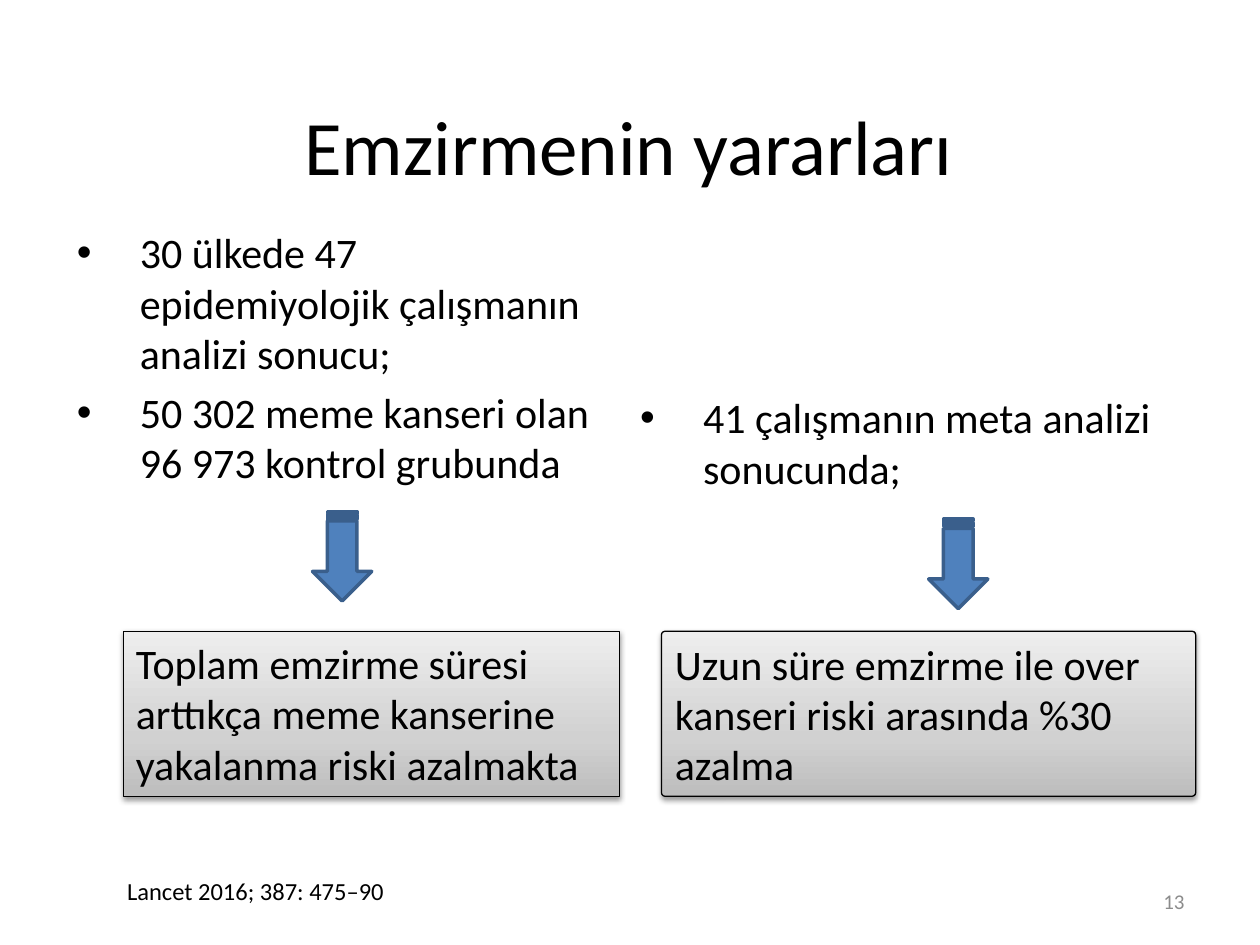
"""Build the slide on the benefits of breastfeeding."""
from copy import deepcopy
from dataclasses import dataclass

from lxml import etree
from pptx import Presentation
from pptx import util as u
from pptx.dml.color import RGBColor
from pptx.enum import shapes, text
from pptx.oxml import ns

BLACK = RGBColor(0, 0, 0)
GREY = RGBColor(0x8C, 0x8C, 0x8C)
BLUE = RGBColor(0x4F, 0x81, 0xBD)
DARK_BLUE = RGBColor(0x3A, 0x5F, 0x8C)
GRADIENT = [
    (0, RGBColor(0xBD, 0xBD, 0xBD)),
    (0.35, RGBColor(0xD1, 0xD1, 0xD1)),
    (1, RGBColor(0xEE, 0xEE, 0xEE)),
]
FONT = "Calibri"


@dataclass
class Box:
    left: float
    top: float
    width: float
    height: float

    def lengths(self) -> list:
        return [u.Inches(v) for v in (self.left, self.top, self.width, self.height)]


@dataclass
class Study:
    points: list[str]
    body: Box
    arrow: Box
    result: list[str]
    panel: Box
    preset: shapes.MSO_SHAPE
    anchor: text.MSO_ANCHOR


STUDIES = [
    Study(
        ["30 ülkede 47 epidemiyolojik çalışmanın analizi sonucu;",
         "50 302 meme kanseri olan 96 973 kontrol grubunda"],
        Box(0.51, 1.75, 4.41, 2.25),
        Box(2.36, 4.18, 0.71, 0.47),
        ["Toplam emzirme süresi arttıkça meme kanserine yakalanma riski azalmakta"],
        Box(0.98, 5.01, 3.94, 1.31),
        shapes.MSO_SHAPE.RECTANGLE,
        text.MSO_ANCHOR.TOP,
    ),
    Study(
        ["41 çalışmanın meta analizi sonucunda;"],
        Box(4.98, 3.06, 4.51, 1.36),
        Box(7.25, 4.24, 0.71, 0.47),
        ["Uzun süre emzirme ile over", "kanseri riski arasında %30", "azalma"],
        Box(5.25, 5.01, 4.24, 1.31),
        shapes.MSO_SHAPE.ROUNDED_RECTANGLE,
        text.MSO_ANCHOR.MIDDLE,
    ),
]


def write(tf, lines: list[str], size: float = 24, color: RGBColor = BLACK,
          align=text.PP_ALIGN.LEFT, anchor=text.MSO_ANCHOR.TOP,
          bullet: bool = False, wrap: bool = True) -> None:
    tf.word_wrap = wrap
    tf.vertical_anchor = anchor
    for i, line in enumerate(lines):
        p = tf.paragraphs[0] if i == 0 else tf.add_paragraph()
        p.alignment = align
        p.space_before = u.Pt(0.2 * size if bullet and i else 0)
        if bullet:
            pPr = p._p.get_or_add_pPr()
            pPr.set("marL", str(u.Inches(0.5)))
            pPr.set("indent", str(u.Inches(-0.5)))
            etree.SubElement(pPr, ns.qn("a:buChar"), char="•")
        r = p.add_run()
        r.text = line
        r.font.name, r.font.size = FONT, u.Pt(size)
        r.font.color.rgb = color


def place(sp, box: Box) -> None:
    sp.left, sp.top, sp.width, sp.height = box.lengths()


def add_label(s, box: Box, line: str, **style) -> None:
    write(s.shapes.add_textbox(*box.lengths()).text_frame, [line], **style)


def add_shape(s, preset, box: Box, line: RGBColor, weight: float):
    sp = s.shapes.add_shape(preset, *box.lengths())
    sp.line.color.rgb = line
    sp.line.width = u.Pt(weight)
    sp.shadow.inherit = False
    return sp


def add_arrow(s, box: Box) -> None:
    sp = add_shape(s, shapes.MSO_SHAPE.STRIPED_RIGHT_ARROW, box, DARK_BLUE, 2)
    sp.rotation = 90
    sp.fill.solid()
    sp.fill.fore_color.rgb = BLUE


def add_panel(s, study: Study) -> None:
    sp = add_shape(s, study.preset, study.panel, BLACK, 0.75)
    if len(sp.adjustments):
        sp.adjustments[0] = 0.022
    sp.fill.gradient()
    sp.fill.gradient_angle = 90
    spPr = sp._element.spPr
    stops = spPr.find(".//" + ns.qn("a:gsLst"))
    stops.append(deepcopy(stops[0]))
    for stop, (position, color) in zip(sp.fill.gradient_stops, GRADIENT):
        stop.position = position
        stop.color.rgb = color
    shadow = etree.SubElement(
        spPr.find(ns.qn("a:effectLst")), ns.qn("a:outerShdw"),
        blurRad=str(u.Pt(3.1)), dist=str(u.Pt(1.6)), dir="5400000", rotWithShape="0")
    tint = etree.SubElement(shadow, ns.qn("a:srgbClr"), val=str(BLACK))
    etree.SubElement(tint, ns.qn("a:alpha"), val="38000")
    write(sp.text_frame, study.result, anchor=study.anchor)


def main() -> None:
    prs = Presentation()
    prs.slide_width, prs.slide_height = u.Inches(10), u.Inches(7.5)
    s = prs.slides.add_slide(prs.slide_layouts[3])
    title, *bodies = s.placeholders
    place(title, Box(0.49, 0.52, 9, 1.25))
    write(title.text_frame, ["Emzirmenin yararları"], size=44,
          align=text.PP_ALIGN.CENTER, anchor=text.MSO_ANCHOR.MIDDLE)
    for study, body in zip(STUDIES, bodies):
        place(body, study.body)
        write(body.text_frame, study.points, bullet=True)
        add_arrow(s, study.arrow)
        add_panel(s, study)
    add_label(s, Box(0.91, 6.9, 2.31, 0.34), "Lancet 2016; 387: 475–90",
              size=14, wrap=False)
    add_label(s, Box(7.17, 6.95, 2.33, 0.4), "13", size=12, color=GREY,
              align=text.PP_ALIGN.RIGHT, anchor=text.MSO_ANCHOR.MIDDLE)
    prs.save("out.pptx")


if __name__ == "__main__":
    main()
